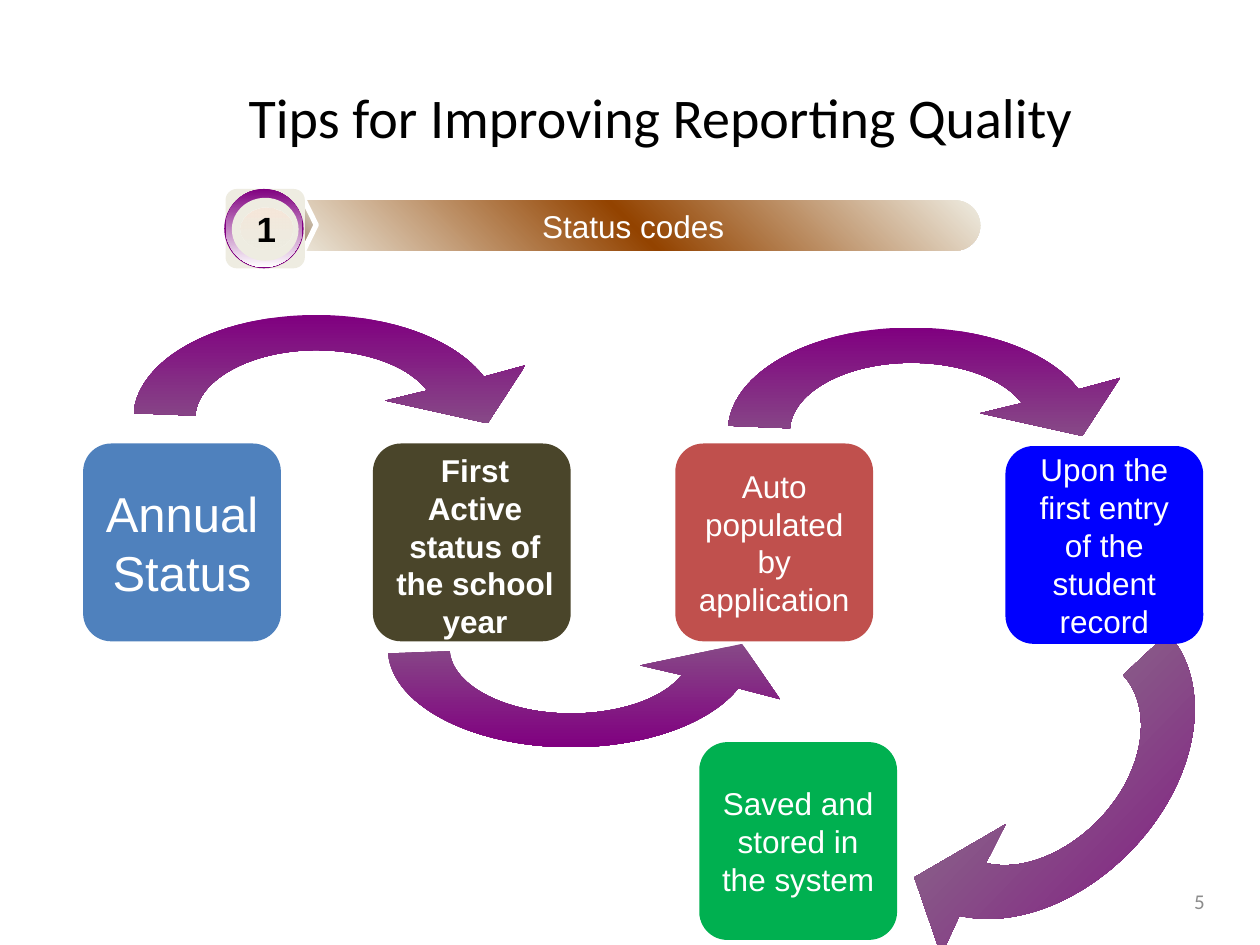
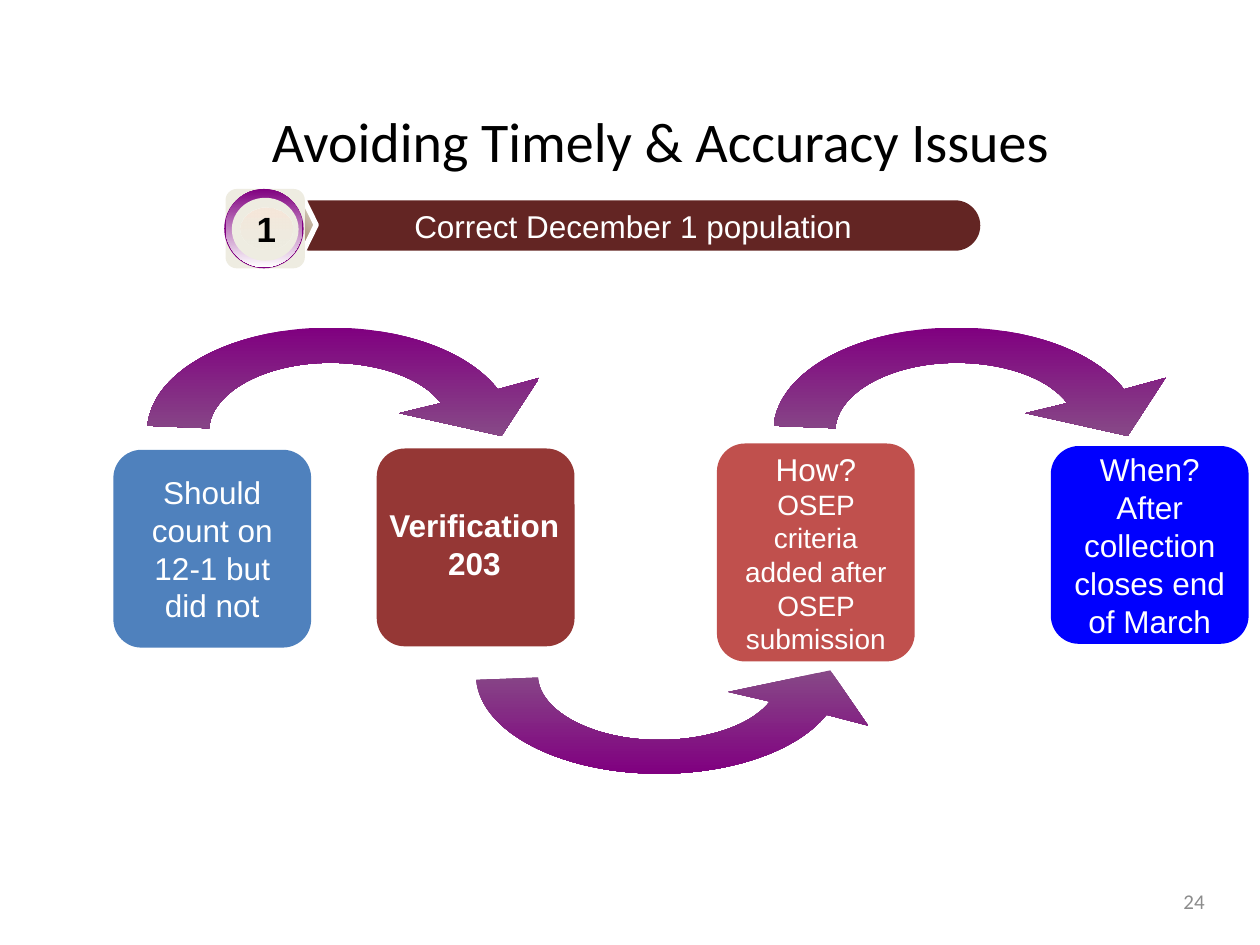
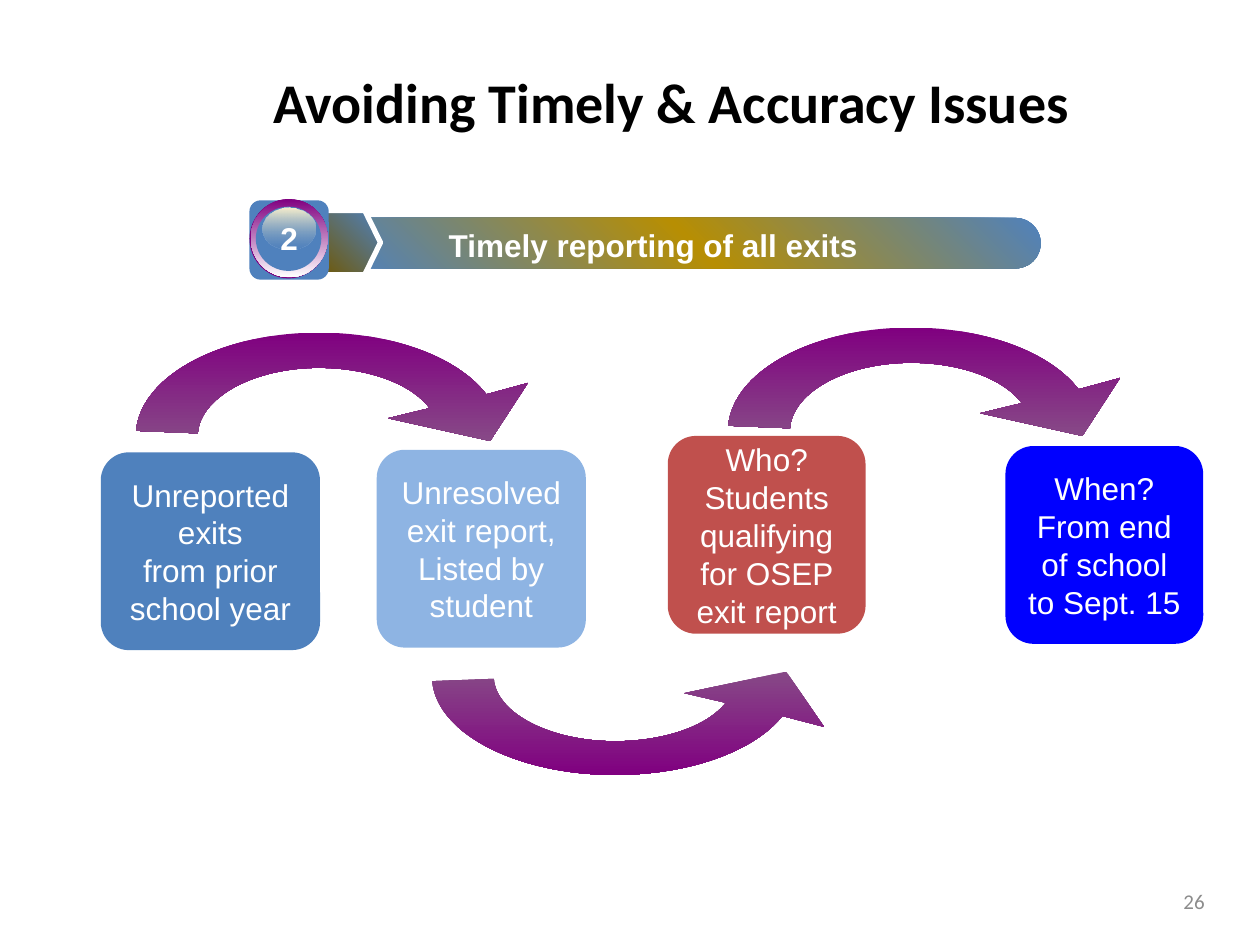
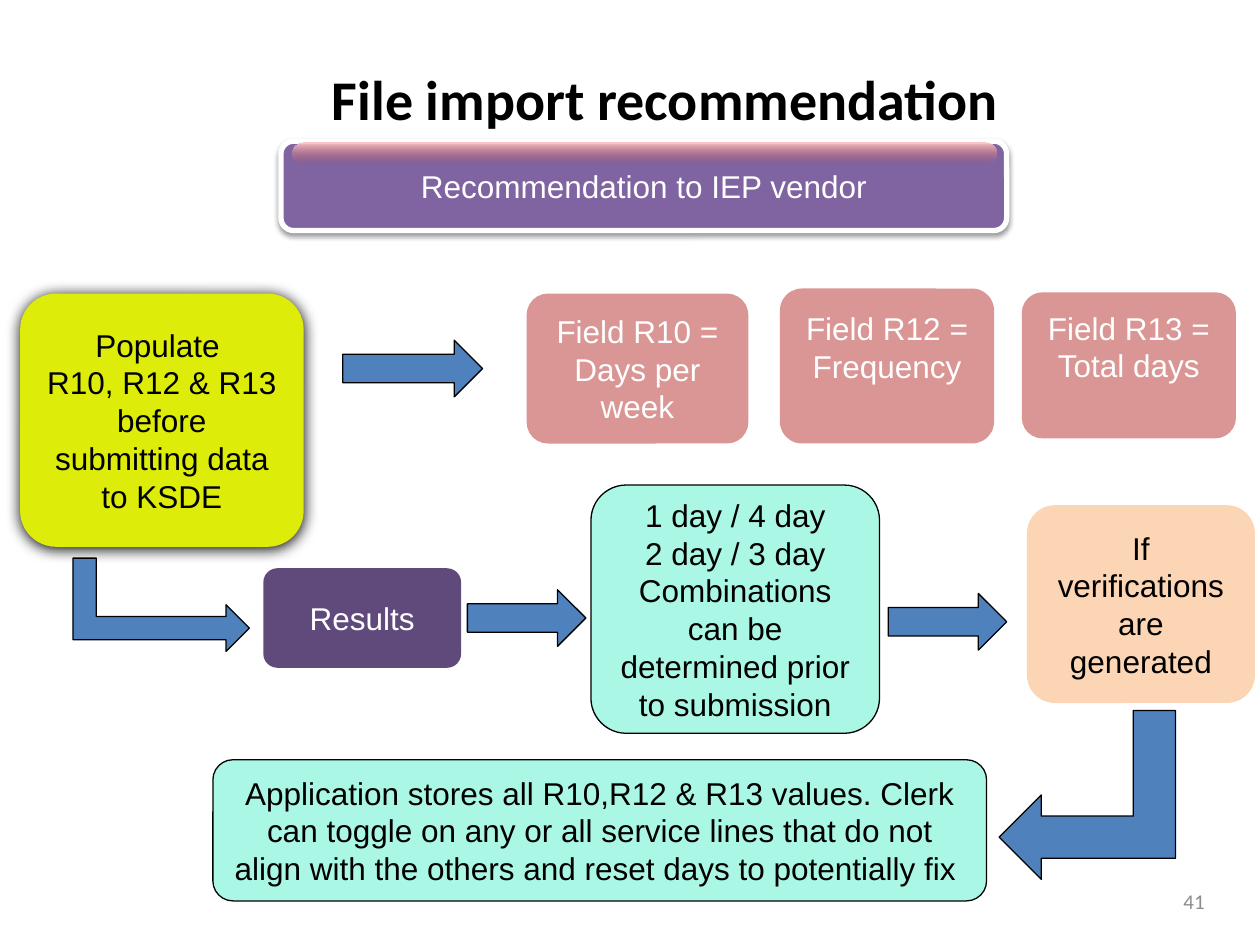
from dataclasses import dataclass, replace

from lxml import etree
from pptx import Presentation
from pptx.dml.color import RGBColor
from pptx.enum.shapes import MSO_SHAPE
from pptx.enum.text import MSO_ANCHOR, PP_ALIGN
from pptx.oxml.ns import qn
from pptx.util import Pt

PX = 9144  # EMU in one px, 100 px to the inch
ROUND_BOX = MSO_SHAPE.ROUNDED_RECTANGLE
OVAL = MSO_SHAPE.OVAL
PENTAGON = MSO_SHAPE.PENTAGON
RIGHT_ARROW = MSO_SHAPE.RIGHT_ARROW
BENT_ARROW = MSO_SHAPE.BENT_UP_ARROW
TOP, MIDDLE = MSO_ANCHOR.TOP, MSO_ANCHOR.MIDDLE
CENTER, RIGHT = PP_ALIGN.CENTER, PP_ALIGN.RIGHT


@dataclass(frozen=True)
class Theme:
    white: str = "FFFFFF"
    black: str = "000000"
    grey: str = "8C8C8C"
    purple: str = "800080"
    faded_purple: str = "874987"
    mid_grey: str = "8D8D8D"
    blue: str = "4F81BD"
    bright_blue: str = "0000FF"
    light_blue: str = "8EB4E3"
    red: str = "C0504D"
    dark_red: str = "953735"
    maroon: str = "632523"
    pink: str = "D99694"
    olive: str = "4A452A"
    green: str = "00B050"
    cream: str = "EEECE1"
    brown: str = "934300"
    dark_brown: str = "5A2900"
    gold: str = "B78E03"
    dark_gold: str = "705702"
    lime: str = "DDED09"
    mint: str = "ABF7E5"
    peach: str = "FCD5B5"
    violet: str = "8064A2"
    dark_violet: str = "604A7B"
    body_font: str = "Arial"
    title_font: str = "Calibri"
    title_size: int = 32
    large_size: int = 28
    number_size: int = 20
    body_size: int = 18
    small_size: int = 16
    footer_size: int = 12
    corner: float = 0.142


THEME = Theme()


@dataclass(frozen=True)
class TextStyle:
    size: int = THEME.body_size
    color: str = THEME.white
    font: str = THEME.body_font
    bold: bool = False
    align: PP_ALIGN = CENTER
    anchor: MSO_ANCHOR = MIDDLE
    wrap: bool = True


BODY = TextStyle()
DARK = replace(BODY, color=THEME.black)
BOLD_TOP = replace(BODY, bold=True, anchor=TOP)
ONE_LINE = replace(BODY, wrap=False)
BOLD_LINE = replace(ONE_LINE, bold=True)
TITLE = TextStyle(THEME.title_size, THEME.black, THEME.title_font)
FOOTER = TextStyle(THEME.footer_size, THEME.grey, THEME.title_font, align=RIGHT)

# Curved arrow in its own 311 by 86 px box: one point is a line, three are a Bezier curve.
ARROW_WIDTH, ARROW_HEIGHT, LOWER_HEIGHT = 311, 86, 82
ARROW_START = (233, 60)
ARROW_SEGMENTS = [
    [(218, 40), (183, 28), (145, 28)],
    [(94, 28), (51, 51), (49, 80)],
    [(0, 78)],
    [(4, 34), (68, 0), (145, 0)],
    [(203, 0), (255, 19), (278, 49)],
    [(311, 40)],
    [(281, 86)],
    [(200, 68)],
]


@dataclass(frozen=True)
class BadgeLook:
    """Rings are rim, bevel, face and shine, as offsets from the tile."""
    rings: tuple
    face: str
    shine: tuple
    number_style: TextStyle
    number_box: tuple = ()


PALE_BADGE = BadgeLook(
    ((-1, 0, 63, 63), (0, 0, 61, 62), (5, 7, 53, 50), (12, 15, 41, 33)),
    THEME.cream, ((0, "F6E7DA"), (100, THEME.cream, 38)),
    TextStyle(THEME.number_size, THEME.black, bold=True, wrap=False))
GLOSSY_BADGE = BadgeLook(
    ((0, -1, 62, 63), (1, -1, 61, 62), (5, 5, 52, 51), (10, 6, 42, 33)),
    THEME.blue, ((0, "FCF2CD"), (100, THEME.blue, 37)), BOLD_LINE, (0, 0, 63, 59))


def emu(box):
    return [round(length * PX) for length in box]


def rgb(color):
    return RGBColor.from_string(color)


def add_color(parent, color, alpha):
    element = etree.SubElement(parent, qn("a:srgbClr"), val=color)
    if alpha < 100:
        etree.SubElement(element, qn("a:alpha"), val=str(alpha * 1000))


def fill_gradient(shape, stops, angle):
    """Stops are (position, color) or (position, color, alpha), in percent."""
    shape.fill.solid()
    solid = shape.element.spPr.find(qn("a:solidFill"))
    gradient = etree.Element(qn("a:gradFill"), rotWithShape="1")
    stop_list = etree.SubElement(gradient, qn("a:gsLst"))
    for position, color, *alpha in stops:
        stop = etree.SubElement(stop_list, qn("a:gs"), pos=str(position * 1000))
        add_color(stop, color, alpha[0] if alpha else 100)
    etree.SubElement(gradient, qn("a:lin"), ang=str(angle * 60000), scaled="0")
    solid.getparent().replace(solid, gradient)


def paint(shape, fill, line=None, angle=90):
    """Fill is None, a color or gradient stops; line is (color, width in points)."""
    shape.shadow.inherit = False
    if fill is None:
        shape.fill.background()
    elif isinstance(fill, str):
        shape.fill.solid()
        shape.fill.fore_color.rgb = rgb(fill)
    else:
        fill_gradient(shape, fill, angle)
    if line:
        shape.line.color.rgb = rgb(line[0])
        shape.line.width = Pt(line[1])
    else:
        shape.line.fill.background()


def add_shadow(shape, alpha, blur, distance):
    effects = shape.element.spPr.find(qn("a:effectLst"))
    shadow = etree.SubElement(
        effects, qn("a:outerShdw"), blurRad=str(Pt(blur)), dist=str(Pt(distance)),
        dir="5400000", algn="ctr", rotWithShape="0")
    add_color(shadow, THEME.black, alpha)


def write_text(shape, text, style):
    """Text is a string or a list of paragraphs; a paragraph is a string or (string, size)."""
    frame = shape.text_frame
    frame.word_wrap = style.wrap
    frame.vertical_anchor = style.anchor
    for index, item in enumerate([text] if isinstance(text, str) else text):
        words, size = (item, style.size) if isinstance(item, str) else item
        paragraph = frame.add_paragraph() if index else frame.paragraphs[0]
        paragraph.alignment = style.align
        run = paragraph.add_run()
        run.text = words
        run.font.name = style.font
        run.font.size = Pt(size)
        run.font.bold = style.bold
        run.font.color.rgb = rgb(style.color)


def add_label(slide, box, text, style):
    write_text(slide.shapes.add_textbox(*emu(box)), text, style)


def add_preset(slide, kind, box, fill, line=None, angle=90, adjustment=None):
    shape = slide.shapes.add_shape(kind, *emu(box))
    if adjustment is not None:
        shape.adjustments[0] = adjustment
    paint(shape, fill, line, angle)
    return shape


def add_card(slide, box, fill, text=None, style=BODY, line=None):
    card = add_preset(slide, ROUND_BOX, box, fill, line, adjustment=THEME.corner)
    if text:
        write_text(card, text, style)
    return card


def bend_segments(shape, segments):
    """Turn each run of three drawn points that stands for a curve into a Bezier segment."""
    lines = shape.element.spPr.iter(qn("a:lnTo"))
    remaining = iter(list(lines))
    for segment in segments:
        drawn = [next(remaining) for _ in segment]
        if len(segment) == 1:
            continue
        curve = etree.Element(qn("a:cubicBezTo"))
        drawn[0].addprevious(curve)
        for line in drawn:
            curve.append(line[0])
            line.getparent().remove(line)


def add_curved_arrow(slide, left, top, width=ARROW_WIDTH, height=ARROW_HEIGHT,
                     rotation=0, below=False, end_color=THEME.faded_purple):
    """An arc that runs left to right, over its boxes or below them."""
    points = []
    for x, y in [ARROW_START, *(point for segment in ARROW_SEGMENTS for point in segment)]:
        y = ARROW_HEIGHT - y if below else y
        points.append(emu((left + x * width / ARROW_WIDTH, top + y * height / ARROW_HEIGHT)))
    builder = slide.shapes.build_freeform(*points[0], scale=1.0)
    builder.add_line_segments(points[1:], close=True)
    arrow = builder.convert_to_shape()
    bend_segments(arrow, ARROW_SEGMENTS)
    colors = [THEME.purple, end_color]
    paint(arrow, list(zip((0, 100), reversed(colors) if below else colors)))
    arrow.rotation = rotation


def add_block_arrow(slide, kind, box, rotation=0, flips=()):
    arrow = add_preset(slide, kind, box, THEME.blue, (THEME.black, 0.75))
    arrow.rotation = rotation
    for flip in flips:
        arrow.element.spPr.xfrm.set(flip, "1")


def add_banner(slide, left, top, fill, plate_box, plate_colors):
    banner = add_preset(slide, ROUND_BOX, (left, top, 551, 40), fill, angle=315, adjustment=0.5)
    add_preset(slide, PENTAGON, plate_box, list(zip((0, 100), plate_colors)),
               (THEME.white, 3), 315, 0.25)
    return banner


def add_badge(slide, left, top, number, look):
    """The number stands in the shine, or in a clear box when the look names one."""
    def place(box):
        x, y, width, height = box
        return left + x, top + y, width, height

    add_card(slide, place((0, 0, 63, 63)), look.face)
    bevel = ((0, THEME.purple), (100, THEME.white))
    for ring, fill in zip(look.rings, (THEME.purple, bevel, look.face, look.shine)):
        holder = add_preset(slide, OVAL, place(ring), fill)
    if look.number_box:
        holder = add_preset(slide, ROUND_BOX, place(look.number_box), None)
    write_text(holder, number, look.number_style)


def add_first_topic(slide, fill, text):
    banner = add_banner(slide, 227, 159, fill, (201, 153, 50, 51),
                        (THEME.dark_brown, THEME.cream))
    write_text(banner, text, ONE_LINE)
    add_badge(slide, 179, 150, "1", PALE_BADGE)


def add_slide(presentation, title, title_box, page, bold=False):
    slide = presentation.slides.add_slide(presentation.slide_layouts[6])
    add_label(slide, title_box, title, replace(TITLE, bold=bold))
    add_label(slide, (733, 695, 233, 40), page, FOOTER)
    return slide


def build_status_codes(presentation):
    slide = add_slide(presentation, "Tips for Improving Reporting Quality",
                      (83, 30, 883, 125), "5")
    add_curved_arrow(slide, 697, 590, 309, 109, rotation=134, end_color=THEME.mid_grey)
    add_curved_arrow(slide, 578, 260)
    add_card(slide, (536, 352, 157, 157), THEME.red, "Auto populated by application")
    add_card(slide, (798, 354, 157, 157), THEME.bright_blue,
             "Upon the first entry of the student record")
    add_card(slide, (66, 352, 157, 157), THEME.blue, "Annual Status",
             replace(BODY, size=THEME.large_size))
    add_curved_arrow(slide, 106, 250)
    add_card(slide, (296, 352, 157, 157), THEME.olive)
    add_first_topic(slide, ((0, THEME.cream), (50, THEME.brown), (100, THEME.cream)),
                    "Status codes")
    add_label(slide, (302, 353, 150, 162), "First Active status of the school year", BOLD_TOP)
    add_curved_arrow(slide, 308, 511, height=LOWER_HEIGHT, below=True)
    add_card(slide, (555, 589, 157, 157), THEME.green, "Saved and stored in the system")


def build_december_population(presentation):
    slide = add_slide(presentation, "Avoiding Timely & Accuracy Issues",
                      (83, 78, 883, 67), "24")
    add_curved_arrow(slide, 614, 260)
    add_card(slide, (569, 352, 157, 173), THEME.red,
             ["How?", ("OSEP criteria added after OSEP submission", THEME.small_size)])
    add_card(slide, (834, 354, 157, 157), THEME.bright_blue,
             "When? After collection closes end of March")
    add_curved_arrow(slide, 117, 260)
    add_card(slide, (299, 356, 157, 157), THEME.dark_red)
    add_preset(slide, ROUND_BOX, (301, 359, 153, 38), THEME.dark_red, adjustment=0.5)
    add_first_topic(slide, THEME.maroon, "Correct December 1 population")
    add_label(slide, (298, 397, 157, 71), "Verification 203", BOLD_TOP)
    add_curved_arrow(slide, 378, 532, height=LOWER_HEIGHT, below=True)
    add_card(slide, (90, 357, 157, 157), THEME.blue, "Should count on 12-1 but did not")


def build_exit_reporting(presentation):
    slide = add_slide(presentation, "Avoiding Timely & Accuracy Issues",
                      (108, 52, 850, 56), "26", bold=True)
    add_card(slide, (80, 359, 174, 157), THEME.blue,
             ["Unreported exits", "from prior school year"])
    add_curved_arrow(slide, 108, 264)
    add_curved_arrow(slide, 578, 260)
    add_card(slide, (299, 357, 166, 157), THEME.light_blue,
             "Unresolved exit report, Listed by student")
    add_card(slide, (530, 346, 157, 157), THEME.red,
             "Who? Students qualifying for OSEP exit report")
    add_card(slide, (798, 354, 157, 157), THEME.bright_blue,
             "When? From end of school to Sept. 15")
    add_banner(slide, 275, 173, ((0, THEME.blue), (50, THEME.gold), (100, THEME.blue)),
               (252, 167, 50, 51), (THEME.dark_gold, THEME.blue))
    topic = add_preset(slide, ROUND_BOX, (345, 169, 354, 51), None)
    write_text(topic, "Timely reporting of all exits ", BOLD_LINE)
    add_badge(slide, 198, 159, "2", GLOSSY_BADGE)
    add_curved_arrow(slide, 343, 533, height=LOWER_HEIGHT, below=True)


def build_file_import(presentation):
    slide = add_slide(presentation, "File import recommendation",
                      (193, 50, 670, 56), "41", bold=True)
    outline = (THEME.black, 0.75)
    populate = add_card(slide, (16, 233, 225, 201), THEME.lime,
                        ["Populate ", "R10, R12 & R13 ", "before submitting data to KSDE"], DARK)
    add_shadow(populate, 100, 8.5, 1)
    heading = add_card(slide, (223, 112, 576, 71), THEME.violet,
                       "Recommendation to IEP vendor", line=(THEME.white, 3))
    add_shadow(heading, 38, 3.1, 1.6)
    add_preset(slide, ROUND_BOX, (232, 113, 559, 17),
               ((0, "FFC6C6"), (100, THEME.red, 0)), adjustment=0.5)

    add_card(slide, (418, 233, 176, 119), THEME.pink, "Field R10 = Days per week")
    for box, text in (((619, 229, 170, 123), "Field R12 = Frequency"),
                      ((811, 232, 170, 116), "Field R13 = Total days")):
        field = add_card(slide, box, THEME.pink, text)
        field.text_frame.margin_bottom = 35 * PX

    add_card(slide, (469, 385, 229, 197), THEME.mint,
             ["1 day / 4 day", "2 day / 3 day",
              "Combinations can be determined prior to submission"], DARK, outline)
    add_card(slide, (209, 451, 157, 79), THEME.dark_violet, "Results")
    add_card(slide, (815, 401, 181, 157), THEME.peach, "If verifications are generated", DARK)
    add_card(slide, (169, 603, 614, 112), THEME.mint,
             "Application stores all R10,R12 & R13 values. Clerk can toggle on any or all "
             "service lines that do not align with the others and reset days to potentially fix ",
             DARK, outline)

    for box in ((272, 270, 111, 45), (371, 468, 94, 45), (705, 471, 94, 45)):
        add_block_arrow(slide, RIGHT_ARROW, box)
    add_block_arrow(slide, BENT_ARROW, (91, 410, 74, 140), 270, ("flipH", "flipV"))
    add_block_arrow(slide, BENT_ARROW, (796, 561, 134, 140), 90, ("flipV",))


def main():
    presentation = Presentation()
    presentation.slide_width, presentation.slide_height = emu((1000, 750))
    build_status_codes(presentation)
    build_december_population(presentation)
    build_exit_reporting(presentation)
    build_file_import(presentation)
    presentation.save("out.pptx")


if __name__ == "__main__":
    main()
